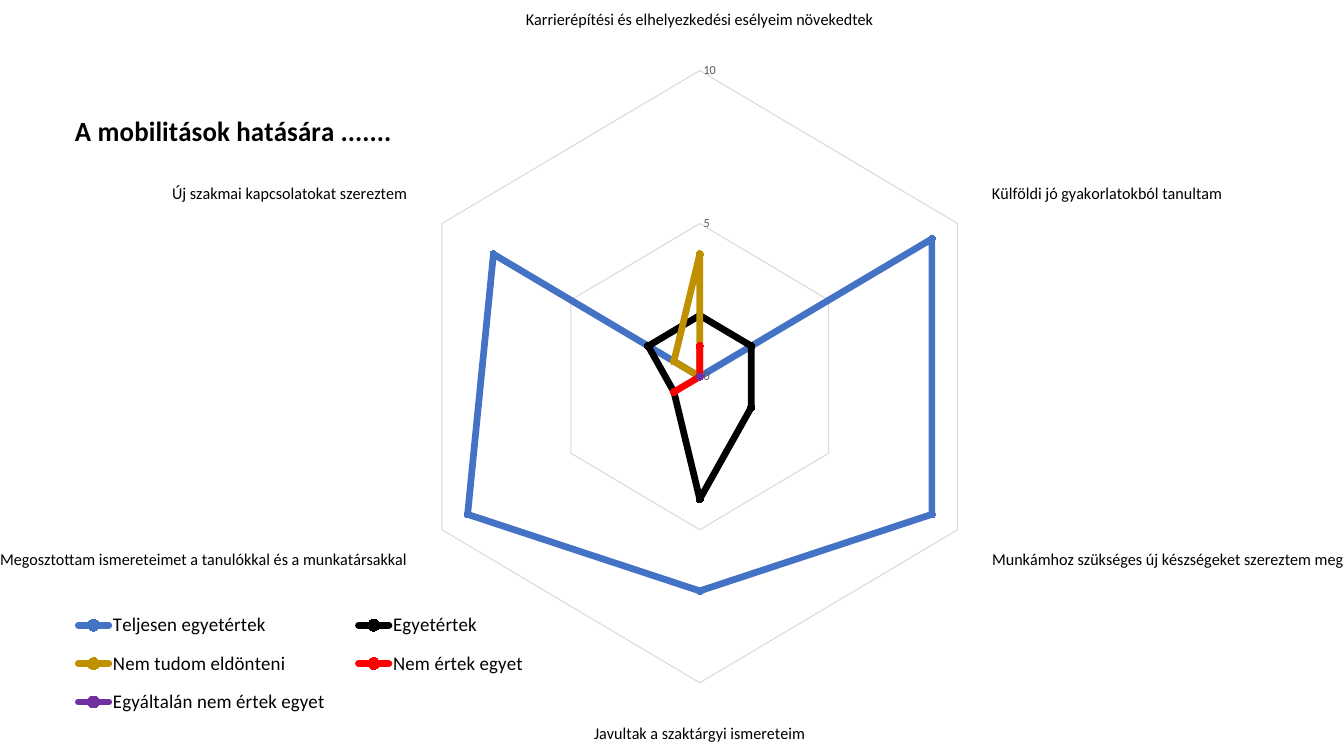
from lxml import etree
from pptx import Presentation
from pptx.chart.data import CategoryChartData
from pptx.dml.color import RGBColor
from pptx.enum.chart import XL_CHART_TYPE, XL_LEGEND_POSITION, XL_MARKER_STYLE, XL_TICK_MARK
from pptx.oxml.ns import qn
from pptx.util import Emu, Pt

RADAR = XL_CHART_TYPE.RADAR_MARKERS
LEGEND_TOP = XL_LEGEND_POSITION.TOP
CIRCLE = XL_MARKER_STYLE.CIRCLE
NO_TICK = XL_TICK_MARK.NONE

# Content
TITLE = "A mobilitások hatására ......."
CATEGORIES = [
    "Karrierépítési és elhelyezkedési esélyeim növekedtek",
    "Külföldi jó gyakorlatokból tanultam",
    "Munkámhoz szükséges új készségeket szereztem meg",
    "Javultak a szaktárgyi ismereteim",
    "Megosztottam ismereteimet a tanulókkal és a munkatársakkal",
    "Új szakmai kapcsolatokat szereztem",
]
# Name, values, line colour, marker colour
SERIES = [
    ("Teljesen egyetértek", (0, 9, 9, 7, 9, 8), "4472C4", "203864"),
    ("Egyetértek", (2, 2, 2, 4, 1, 2), "000000", "ED7D31"),
    ("Nem tudom eldönteni", (4, 0, 0, 0, 0, 1), "BF9000", "A5A5A5"),
    ("Nem értek egyet", (1, 0, 0, 0, 1, 0), "FF0000", "FFC000"),
    ("Egyáltalán nem értek egyet", (0, 0, 0, 0, 0, 0), "7030A0", "5B9BD5"),
]
FONT = "Calibri"
BLACK, GRAY, GRID = "000000", "595959", "D9D9D9"

# Lengths in px: slide size, chart frame, and parts inside the frame
PX = 914400 / 100.8
SLIDE_WIDTH, SLIDE_HEIGHT = 1344, 756
CHART_TOP = 10
CHART_HEIGHT = SLIDE_HEIGHT - CHART_TOP
TITLE_BOX = (60, 88)
LEGEND_BOX = (40, 587, 520, 131)
PLOT_BOX = (371, 52, 689, 620)


def px(length):
    return Emu(round(length * PX))


def color(hex_value):
    return RGBColor.from_string(hex_value)


def set_font(font, size, hex_value=BLACK, bold=False):
    font.name, font.size, font.bold = FONT, Pt(size), bold
    font.color.rgb = color(hex_value)


def set_line(line, hex_value, width):
    line.color.rgb = color(hex_value)
    line.width = Pt(width)


def place(element, index, box, inner=False):
    """Give a chart part a manual layout, as fractions of the chart frame."""
    for old_layout in element.findall(qn("c:layout")):
        element.remove(old_layout)
    layout = etree.Element(qn("c:layout"))
    manual = etree.SubElement(layout, qn("c:manualLayout"))
    settings = [("layoutTarget", "inner")] if inner else []
    settings += [("xMode", "edge"), ("yMode", "edge")]
    sides = (SLIDE_WIDTH, CHART_HEIGHT, SLIDE_WIDTH, CHART_HEIGHT)
    settings += [(name, f"{length / side:.4f}")
                 for name, length, side in zip("xywh", box, sides)]
    for name, value in settings:
        etree.SubElement(manual, qn(f"c:{name}")).set("val", value)
    element.insert(index, layout)


presentation = Presentation()
presentation.slide_width = px(SLIDE_WIDTH)
presentation.slide_height = px(SLIDE_HEIGHT)
slide = presentation.slides.add_slide(presentation.slide_layouts[6])

# Radar chart
data = CategoryChartData()
data.categories = CATEGORIES
for name, values, _, _ in SERIES:
    data.add_series(name, values)
chart = slide.shapes.add_chart(
    RADAR, 0, px(CHART_TOP), px(SLIDE_WIDTH), px(CHART_HEIGHT), data).chart
set_font(chart.font, 10)
plot = chart.plots[0]
plot.vary_by_categories = False
for series, (_, _, line_color, marker_color) in zip(plot.series, SERIES):
    set_line(series.format.line, line_color, 5)
    series.marker.style = CIRCLE
    series.marker.size = 5
    series.marker.format.fill.solid()
    series.marker.format.fill.fore_color.rgb = color(marker_color)
    series.marker.format.line.fill.background()
for line in chart.element.xpath(".//c:ser/c:spPr/a:ln"):
    line.set("cap", "rnd")

# Axes
category_axis, value_axis = chart.category_axis, chart.value_axis
for axis, size, text_color in ((category_axis, 12, BLACK), (value_axis, 9, GRAY)):
    axis.major_tick_mark = axis.minor_tick_mark = NO_TICK
    set_font(axis.tick_labels.font, size, text_color)
category_axis.has_major_gridlines = False
set_line(category_axis.format.line, GRID, 0.75)
value_axis.minimum_scale, value_axis.maximum_scale = 0, 10
value_axis.major_unit = 5
value_axis.has_major_gridlines = True
set_line(value_axis.major_gridlines.format.line, GRID, 0.75)
value_axis.format.line.fill.background()

# Title and legend
chart.has_title = True
title_frame = chart.chart_title.text_frame
title_frame.text = TITLE
set_font(title_frame.paragraphs[0].runs[0].font, 20, bold=True)
chart.has_legend = True
chart.legend.position = LEGEND_TOP
chart.legend.include_in_layout = False
set_font(chart.legend.font, 14)

# Positions inside the chart frame
place(chart.element.xpath("c:chart/c:title")[0], 1, TITLE_BOX)
place(chart.element.xpath("c:chart/c:legend")[0], 1, LEGEND_BOX)
place(chart.element.xpath("c:chart/c:plotArea")[0], 0, PLOT_BOX, inner=True)

presentation.save("out.pptx")
